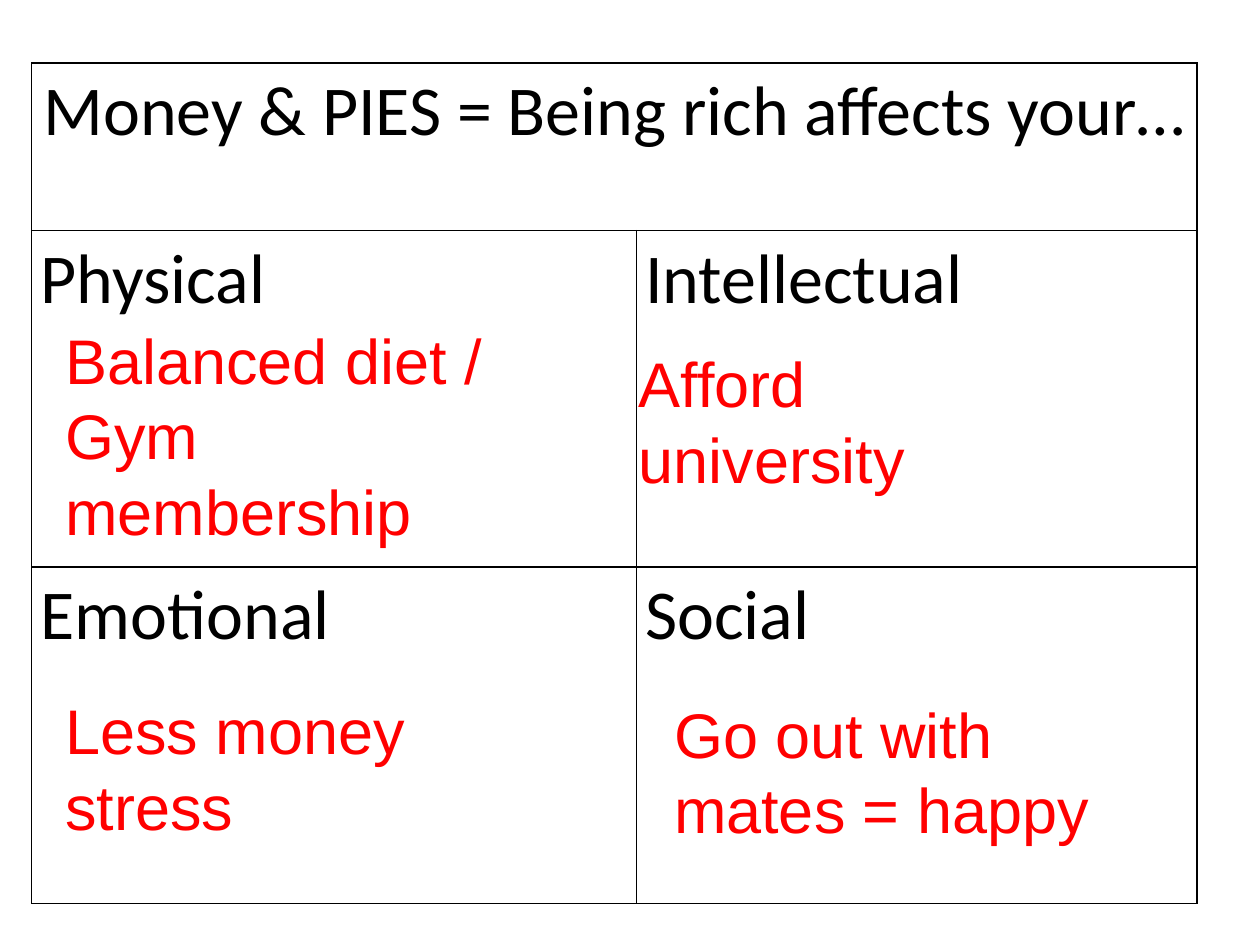
from dataclasses import dataclass

from lxml import etree
from pptx import Presentation
from pptx.dml.color import RGBColor
from pptx.enum.text import MSO_AUTO_SIZE, PP_ALIGN
from pptx.oxml.ns import qn
from pptx.util import Cm, Pt

LEFT, CENTER = PP_ALIGN.LEFT, PP_ALIGN.CENTER
FIT_SHAPE = MSO_AUTO_SIZE.SHAPE_TO_FIT_TEXT
BLANK_LAYOUT = 6


@dataclass(frozen=True)
class Theme:
    """Colours, fonts and type sizes of the slide."""
    ink: str = "000000"
    answer: str = "FF0000"
    heading_font: str = "Calibri"
    answer_font: str = "Arial"
    heading_size: int = 40
    answer_size: int = 36
    border: int = 1


THEME = Theme()
TITLE = "Money & PIES = Being rich affects your…"
HEADINGS = [["Physical", "Intellectual"], ["Emotional", "Social"]]
COLS = [12.19, 11.3]
ROWS = [3.38, 6.78, 6.78]
ANSWER_WIDTH = 9.09
ANSWERS = [
    (0, 0, 0.43, 1.7, 4.88, "Balanced diet / Gym membership"),
    (0, 1, -0.2, 2.18, 3.33, "Afford university"),
    (1, 0, 0.43, 2.39, 3.33, "Less money stress"),
    (1, 1, 0.51, 2.46, 3.33, "Go out with mates = happy"),
]


def set_font(p, name, size, color):
    """Give a paragraph its font, size and colour."""
    p.font.name = name
    p.font.size = Pt(size)
    p.font.color.rgb = RGBColor.from_string(color)


def set_borders(cell):
    """Draw a solid line on all four sides of a cell."""
    tc_pr = cell._tc.get_or_add_tcPr()
    for side in ("lnL", "lnR", "lnT", "lnB"):
        ln = etree.SubElement(tc_pr, qn(f"a:{side}"), w=str(Pt(THEME.border)))
        fill = etree.SubElement(ln, qn("a:solidFill"))
        etree.SubElement(fill, qn("a:srgbClr"), val=THEME.ink)


def format_cell(cell):
    """Give a cell its margins, borders and empty fill."""
    cell.margin_left = cell.margin_right = Cm(0.18)
    cell.margin_top = cell.margin_bottom = 0
    set_borders(cell)
    cell.fill.background()


def write_heading(cell, text, align=LEFT):
    """Write one heading into a cell."""
    p = cell.text_frame.paragraphs[0]
    p.text = text
    p.alignment = align
    p.line_spacing = 1.07
    set_font(p, THEME.heading_font, THEME.heading_size, THEME.ink)


def add_grid(s, x, y):
    """Place the table with a title row above the four headings."""
    table = s.shapes.add_table(len(ROWS), len(COLS), Cm(x), Cm(y),
                               Cm(sum(COLS)), Cm(sum(ROWS))).table
    table.first_row = table.horz_banding = False
    for col, width in zip(table.columns, COLS):
        col.width = Cm(width)
    for row, height in zip(table.rows, ROWS):
        row.height = Cm(height)
    for cell in table.iter_cells():
        format_cell(cell)
    table.cell(0, 0).merge(table.cell(0, 1))
    write_heading(table.cell(0, 0), TITLE, CENTER)
    for i, headings in enumerate(HEADINGS, start=1):
        for j, heading in enumerate(headings):
            write_heading(table.cell(i, j), heading)


def add_answers(s, x, y):
    """Place each answer relative to the corner of its quadrant."""
    for row, col, dx, dy, height, text in ANSWERS:
        left = x + sum(COLS[:col]) + dx
        top = y + sum(ROWS[:row + 1]) + dy
        sp = s.shapes.add_textbox(Cm(left), Cm(top), Cm(ANSWER_WIDTH), Cm(height))
        tf = sp.text_frame
        tf.word_wrap = True
        tf.auto_size = FIT_SHAPE
        p = tf.paragraphs[0]
        p.text = text
        set_font(p, THEME.answer_font, THEME.answer_size, THEME.answer)


def main():
    """Build and save the slide."""
    prs = Presentation()
    prs.slide_width, prs.slide_height = Cm(25.4), Cm(19.05)
    s = prs.slides.add_slide(prs.slide_layouts[BLANK_LAYOUT])
    x, y = 0.64, 1.27
    add_grid(s, x, y)
    add_answers(s, x, y)
    prs.save("out.pptx")


if __name__ == "__main__":
    main()
